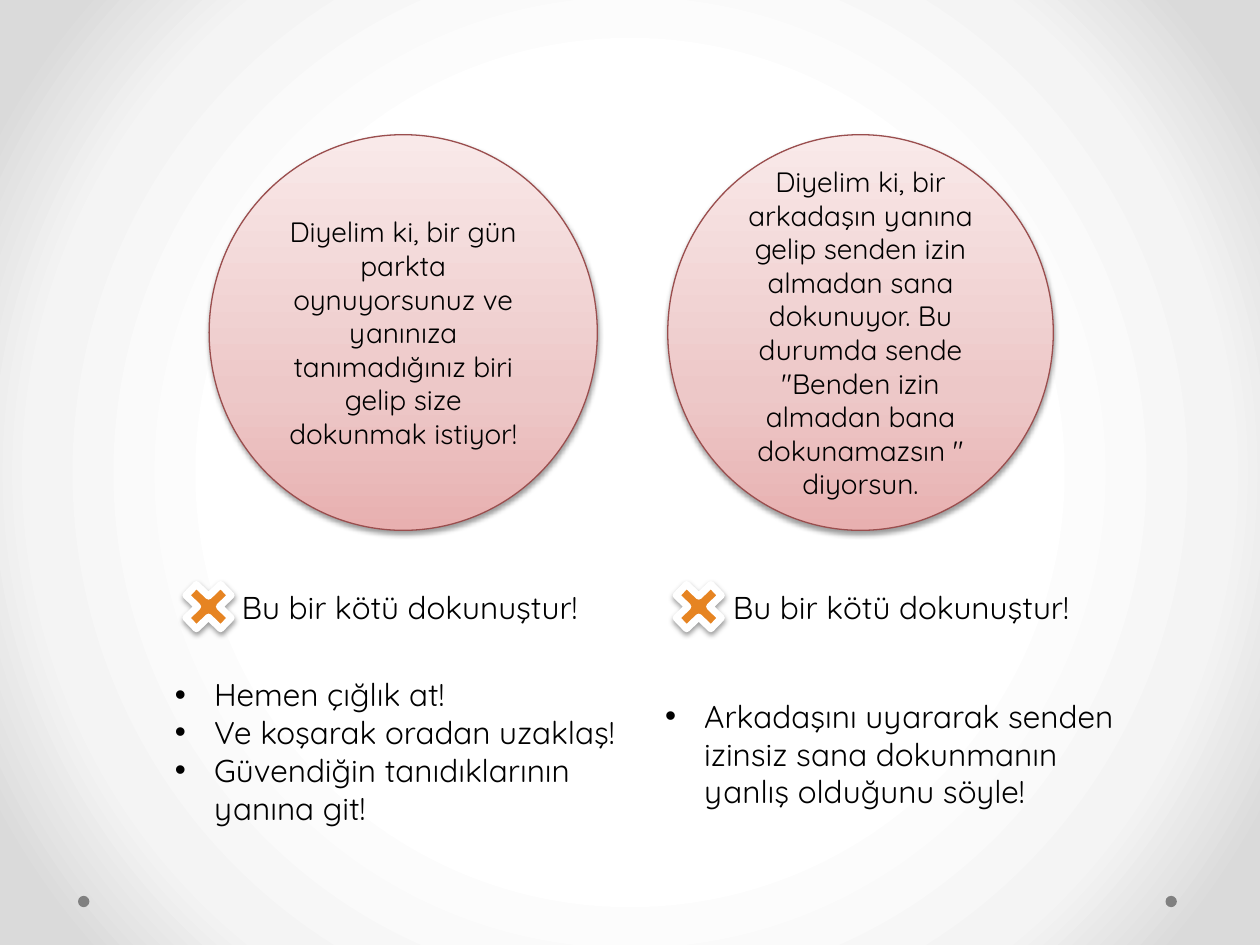
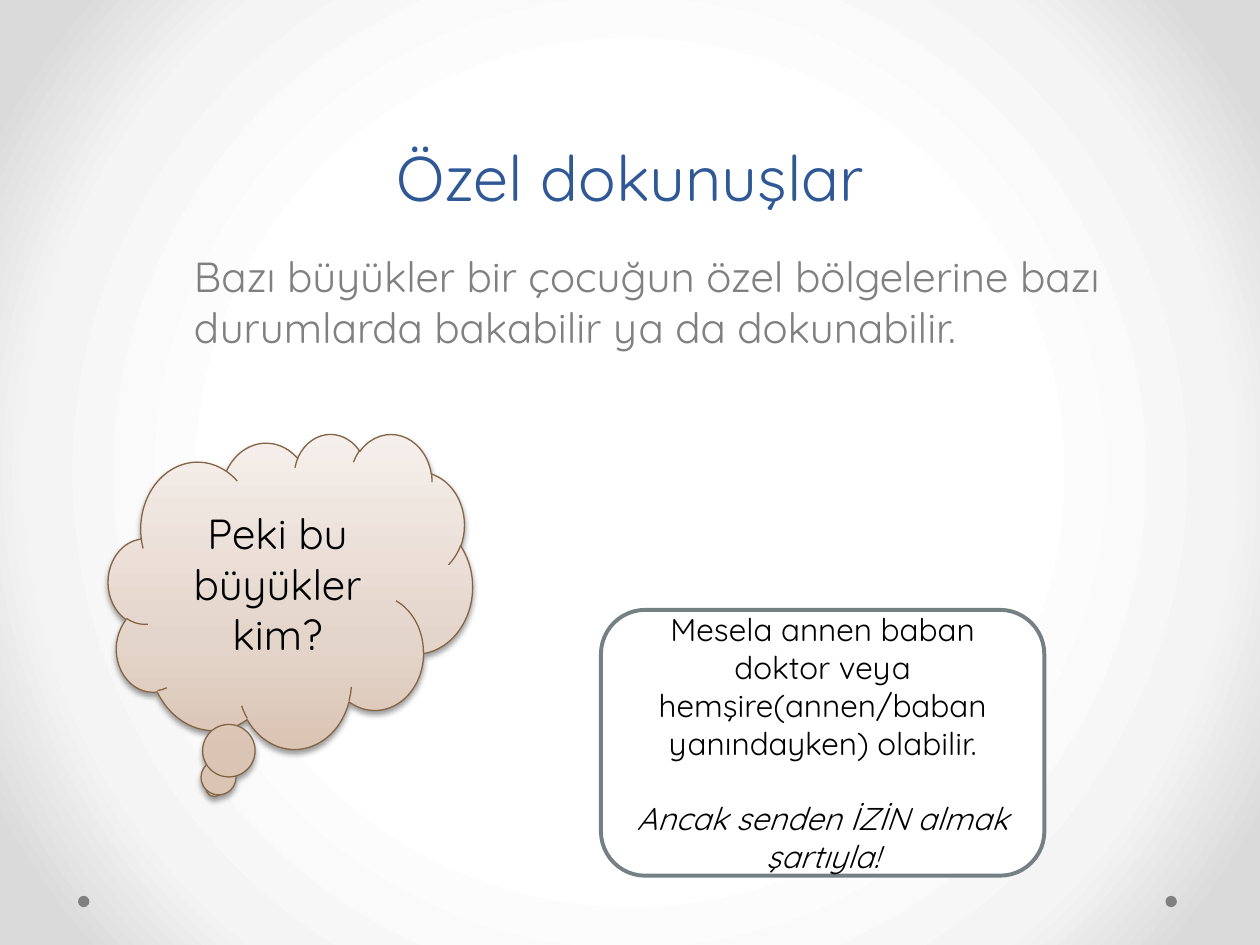
from lxml.etree import SubElement as Sub
from pptx import Presentation
from pptx.dml.color import RGBColor as Rgb
from pptx.enum.shapes import MSO_SHAPE as Kind
from pptx.enum.text import MSO_ANCHOR as Anchor, PP_ALIGN as Align
from pptx.oxml.ns import qn
from pptx.util import Pt

FONT = "Quicksand"
HUE = {
    "dot": "808080", "ink": "000000", "title": "2F5897", "white": "FFFFFF",
    "cross": "E68422", "rose": "9A4E4E", "brown": "836445", "slate": "758085",
}
BACK = [(50, "FFFFFF"), (76, "F4F4F4"), (92, "DADADA")]
ROSE = [(0, "E8B0B0"), (35, "EDC8C8"), (100, "F9E9E9")]
SAND = [(0, "DAC4B4"), (35, "E4D5CB"), (100, "F5EFEB")]


def blend(node, stops, ring=False):
    for kid in list(node):
        node.remove(kid)
    group = Sub(node, qn("a:gsLst"))
    for spot, hue in stops:
        stop = Sub(group, qn("a:gs"), pos=str(spot * 1000))
        Sub(stop, qn("a:srgbClr"), val=hue)
    if ring:
        core = Sub(node, qn("a:path"), path="circle")
        Sub(core, qn("a:fillToRect"), l="50000", t="50000", r="50000", b="50000")
    else:
        Sub(node, qn("a:lin"), ang="16200000", scaled="0")


def put(slide, box, lines=(), kind=None, fill=None, line=None, shade=False,
        indent=None, bullet=False, anchor=Anchor.TOP, align=Align.LEFT, para={}, **font):
    box = [Pt(n) for n in box]
    if kind is None:
        shape = slide.shapes.add_textbox(*box)
    else:
        shape = slide.shapes.add_shape(kind, *box)
        shape.shadow.inherit = False
        if isinstance(fill, list):
            shape.fill.gradient()
            blend(shape.element.xpath("./p:spPr/a:gradFill")[0], fill)
        else:
            shape.fill.solid()
            shape.fill.fore_color.rgb = Rgb.from_string(HUE[fill])
        if line:
            shape.line.color.rgb = Rgb.from_string(HUE[line[0]])
            shape.line.width = Pt(line[1])
        else:
            shape.line.fill.background()
        if shade:
            glow = shape.element.xpath("./p:spPr/a:effectLst")[0]
            cast = Sub(glow, qn("a:outerShdw"), blurRad=str(Pt(3.1)), dist=str(Pt(1.6)),
                       dir="5400000", algn="ctr", rotWithShape="0")
            tint = Sub(cast, qn("a:srgbClr"), val=HUE["ink"])
            Sub(tint, qn("a:alpha"), val="38000")
    frame = shape.text_frame
    frame.word_wrap = True
    frame.vertical_anchor = anchor
    hue = font.pop("hue", "ink")
    for i, text in enumerate(lines):
        part = frame.paragraphs[0] if i == 0 else frame.add_paragraph()
        text, more = text if isinstance(text, tuple) else (text, {})
        for key, val in {"alignment": align, **para, **more.get("para", {})}.items():
            setattr(part, key, val)
        run = part.add_run()
        run.text = text
        for key, val in {"name": FONT, **font, **more.get("font", {})}.items():
            setattr(run.font, key, val)
        run.font.color.rgb = Rgb.from_string(HUE[hue])
        if indent:
            prop = part._p.get_or_add_pPr()
            prop.set("marL", str(Pt(indent)))
            prop.set("indent", str(Pt(-indent if bullet else 0)))
            if bullet:
                Sub(prop, qn("a:buFont"), typeface="Arial")
                Sub(prop, qn("a:buChar"), char="•")
    return shape


deck = Presentation()
deck.slide_width, deck.slide_height = Pt(720), Pt(540)
pages = []
for _ in range(2):
    page = deck.slides.add_slide(deck.slide_layouts[6])
    page.background.fill.gradient()
    blend(page.element.xpath(".//p:bgPr/a:gradFill")[0], BACK, ring=True)
    for x in (666, 44.6):
        put(page, (x, 511.9, 6.5, 6.5), kind=Kind.OVAL, fill="dot")
    pages.append(page)
touch, care = pages

MID = {"anchor": Anchor.MIDDLE, "align": Align.CENTER}
cases = [
    {"ball": (119.5, 221.8), "note": 131, "tips": (92.9, 382.3, 94.3), "cross": 100.1,
     "story": "Diyelim ki, bir gün parkta oynuyorsunuz ve yanınıza tanımadığınız biri "
              "gelip size dokunmak istiyor!",
     "steps": ["Hemen çığlık at!", "Ve koşarak oradan uzaklaş!",
               "Güvendiğin tanıdıklarının yanına git!"]},
    {"ball": (381.6, 220.3), "note": 411.8, "tips": (373, 394.6, 72.7), "cross": 380.2,
     "story": "Diyelim ki, bir arkadaşın yanına gelip senden izin almadan sana dokunuyor. "
              "Bu durumda sende \"Benden izin almadan bana dokunamazsın \" diyorsun.",
     "steps": ["Arkadaşını uyararak senden izinsiz sana dokunmanın yanlış olduğunu söyle!"]},
]
for case in cases:
    x, wide = case["ball"]
    put(touch, (x, 77, wide, 226.1), [case["story"]], kind=Kind.OVAL, fill=ROSE,
        line=("rose", 0.75), shade=True, size=Pt(16), **MID)
    put(touch, (case["note"], 332.6, 218.2, 28.8), ["Bu bir kötü dokunuştur!"], size=Pt(18))
    x, y, high = case["tips"]
    put(touch, (x, y, 288.7, high), case["steps"], indent=22.3, bullet=True, size=Pt(18))
    put(touch, (case["cross"], 328.3, 38.2, 36.7), kind=Kind.MATH_MULTIPLY, fill="cross",
        line=("white", 4), shade=True)

put(care, (36, 0, 648, 126), ["Özel dokunuşlar"], anchor=Anchor.BOTTOM, align=Align.CENTER,
    para={"line_spacing": Pt(58)}, size=Pt(36), hue="title")
put(care, (76.3, 139.7, 570.2, 97.9),
    ["Bazı büyükler bir çocuğun özel bölgelerine bazı durumlarda bakabilir ya da dokunabilir."],
    indent=27.4, size=Pt(24), hue="dot")
put(care, (61.9, 247.7, 208.1, 180), ["Peki bu büyükler kim?"], kind=Kind.CLOUD_CALLOUT,
    fill=SAND, line=("brown", 0.75), shade=True, size=Pt(24), **MID)
put(care, (343.4, 348.5, 253.4, 151.9),
    ["Mesela annen baban doktor veya hemşire(annen/baban yanındayken) olabilir.",
     ("Ancak senden İZİN almak şartıyla!",
      {"para": {"space_before": Pt(21.6)}, "font": {"italic": True}})],
    kind=Kind.ROUNDED_RECTANGLE, fill="white", line=("slate", 2.25), size=Pt(18), **MID)

deck.save("out.pptx")
